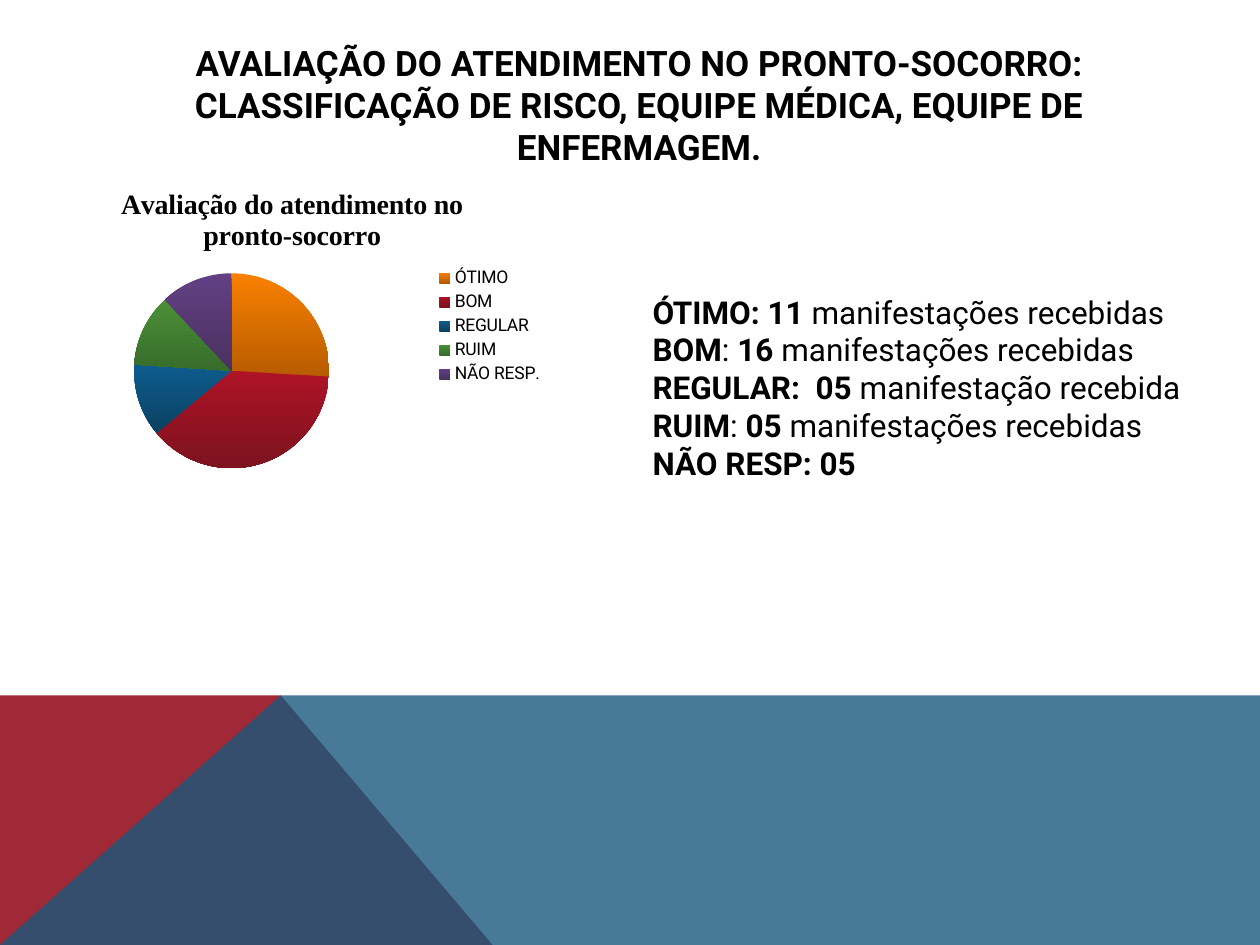
from lxml import etree
from pptx import Presentation
from pptx.chart.data import CategoryChartData
from pptx.dml.color import RGBColor
from pptx.enum import chart as ch, text
from pptx.oxml import parse_xml
from pptx.oxml.ns import nsdecls, qn
from pptx.util import Cm, Pt

W, H, BAND_TOP, PEAK = 25.4, 19.05, 14.02, 5.66
FONT, BLACK = "Roboto", "000000"
TITLE = ("AVALIAÇÃO DO ATENDIMENTO NO PRONTO-SOCORRO: CLASSIFICAÇÃO DE RISCO, "
         "EQUIPE MÉDICA, EQUIPE DE ENFERMAGEM.")
CHART_TITLE = "Avaliação do atendimento no pronto-socorro"
# category, percentage, top colour, bottom colour
RATINGS = [
    ("ÓTIMO", 26, "F98000", "B85C00"),
    ("BOM", 38, "AE1326", "7C131F"),
    ("REGULAR", 12, "0E5C8E", "0C4162"),
    ("RUIM", 12, "4A9038", "386C2B"),
    ("NÃO RESP.", 12, "634084", "4A315F"),
]
# each line is a list of (wording, bold)
COUNTS = [
    [("ÓTIMO: 11", True), (" manifestações recebidas", False)],
    [("BOM", True), (": ", False), ("16 ", True), ("manifestações recebidas", False)],
    [("REGULAR:  05", True), (" manifestação recebida", False)],
    [("RUIM", True), (": ", False), ("05 ", True), ("manifestações recebidas", False)],
    [("NÃO RESP: 05", True)],
]
# outline in cm, colour, opacity in percent
BANDS = [
    ([(0, H), (0, BAND_TOP), (PEAK, BAND_TOP), (9.93, H)], "9F2936", 100),
    ([(0, H), (PEAK, BAND_TOP), (W, BAND_TOP), (W, H)], "1B587C", 80),
]


def rgb(value):
    return RGBColor.from_string(value)


def style(font, size, bold=False, name=FONT):
    font.name, font.size, font.bold = name, Pt(size), bold
    font.color.rgb = rgb(BLACK)


def place(shape, left, top, width, height):
    shape.left, shape.top = Cm(left), Cm(top)
    shape.width, shape.height = Cm(width), Cm(height)


def add_band(s, points, color, opacity):
    start, *rest = [(Cm(x), Cm(y)) for x, y in points]
    builder = s.shapes.build_freeform(*start)
    builder.add_line_segments(rest, close=True)
    sp = builder.convert_to_shape()
    sp.shadow.inherit = False
    sp.line.fill.background()
    sp.fill.solid()
    sp.fill.fore_color.rgb = rgb(color)
    if opacity < 100:
        clr = sp.fill._xPr.find(qn("a:solidFill"))[0]
        etree.SubElement(clr, qn("a:alpha"), val=str(opacity * 1000))


def set_layout(element, x, y, w, h, inner=False):
    """Fix a chart part at fractions of the chart area."""
    for old in element.findall(qn("c:layout")):
        element.remove(old)
    target = '<c:layoutTarget val="inner"/>' if inner else ""
    layout = parse_xml(
        f'<c:layout {nsdecls("c")}><c:manualLayout>{target}'
        '<c:xMode val="edge"/><c:yMode val="edge"/>'
        f'<c:x val="{x}"/><c:y val="{y}"/><c:w val="{w}"/><c:h val="{h}"/>'
        '</c:manualLayout></c:layout>')
    element.insert(0 if inner else 1, layout)


def add_pie(s):
    data = CategoryChartData()
    data.categories = [r[0] for r in RATINGS]
    data.add_series("Series 1", [r[1] for r in RATINGS])
    chart = s.shapes.add_chart(ch.XL_CHART_TYPE.PIE, Cm(0.58), Cm(3.38),
                               Cm(10.62), Cm(6.45), data).chart
    style(chart.font, 10)

    chart.has_title = True
    tf = chart.chart_title.text_frame
    tf.text = CHART_TITLE
    style(tf.paragraphs[0].runs[0].font, 16, True, "Times New Roman")
    chart.chart_title.include_in_layout = True

    chart.has_legend = True
    chart.legend.position = ch.XL_LEGEND_POSITION.RIGHT
    chart.legend.include_in_layout = True
    set_layout(chart.legend._element, 0.77, 0.3, 0.21, 0.39)
    plot = chart.plots[0]
    plot.vary_by_categories = True
    set_layout(plot._element.getparent(), 0.2, 0.33, 0.37, 0.61, inner=True)

    for i, (_, _, top, bottom) in enumerate(RATINGS):
        fmt = plot.series[0].points[i].format
        fmt.line.fill.background()
        fmt.fill.gradient()
        fmt.fill.gradient_angle = 270
        for stop, color in zip(fmt.fill.gradient_stops, (top, bottom)):
            stop.color.rgb = rgb(color)


def fill_title(sp):
    place(sp, 1.57, 1.02, 22.63, 2.16)
    tf = sp.text_frame
    tf.text = TITLE
    tf.auto_size = text.MSO_AUTO_SIZE.NONE
    tf.vertical_anchor = text.MSO_ANCHOR.MIDDLE
    p = tf.paragraphs[0]
    p.alignment = text.PP_ALIGN.CENTER
    style(p.runs[0].font, 20, True)


def fill_counts(sp):
    place(sp, 12.9, 5.77, 11.3, 4.88)
    tf = sp.text_frame
    tf.auto_size = text.MSO_AUTO_SIZE.NONE
    for i, line in enumerate(COUNTS):
        p = tf.add_paragraph() if i else tf.paragraphs[0]
        p.space_before = Pt(0)
        pPr = p._p.get_or_add_pPr()
        pPr.set("marL", "0")
        pPr.set("indent", "0")
        etree.SubElement(pPr, qn("a:buNone"))
        for wording, bold in line:
            r = p.add_run()
            r.text = wording
            style(r.font, 18, bold)


def main():
    prs = Presentation()
    prs.slide_width, prs.slide_height = Cm(W), Cm(H)
    s = prs.slides.add_slide(prs.slide_layouts[1])
    for band in BANDS:
        add_band(s, *band)
    fill_title(s.shapes.title)
    add_pie(s)
    fill_counts(s.placeholders[1])
    prs.save("out.pptx")


if __name__ == "__main__":
    main()
